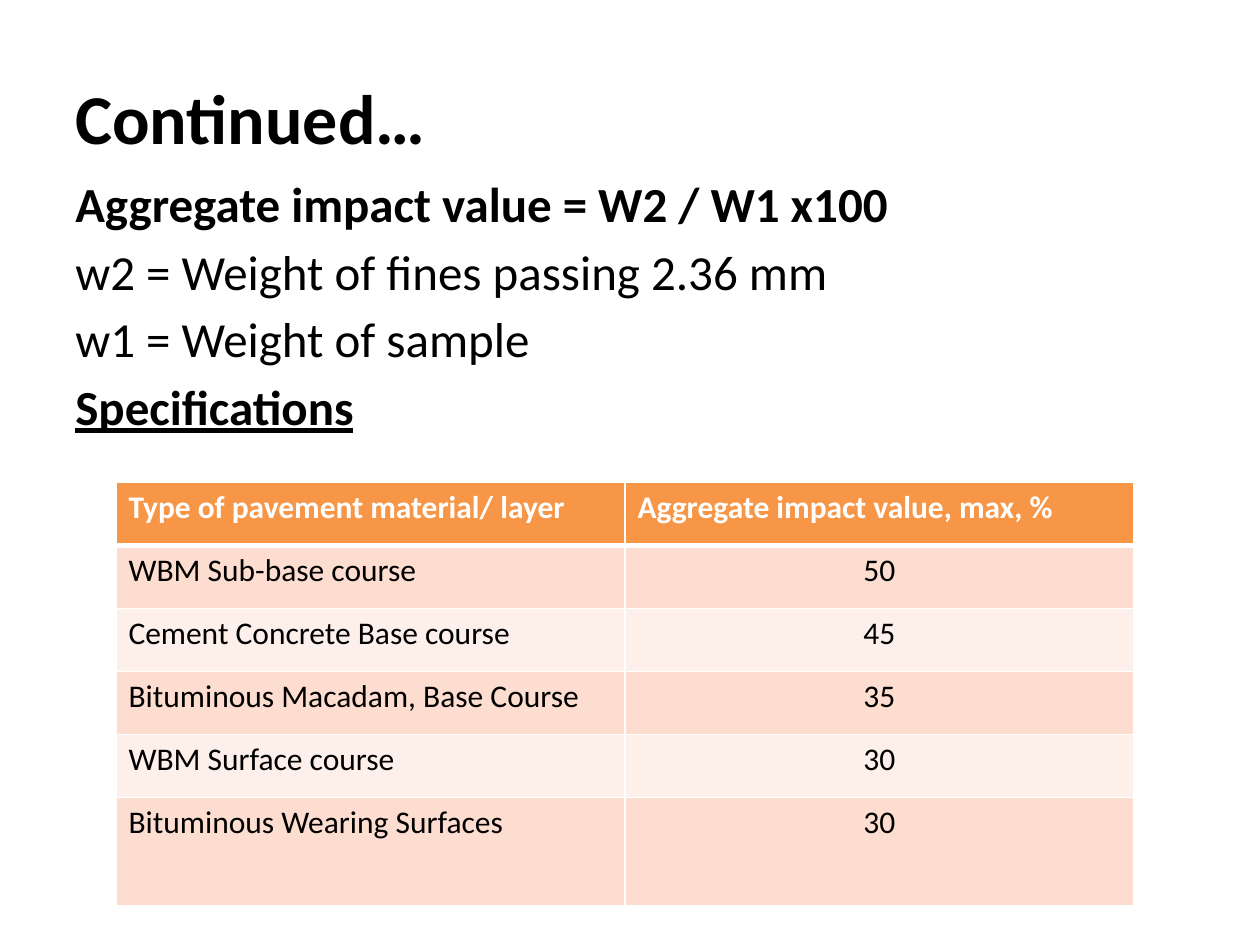
from lxml.etree import SubElement
from pptx import Presentation
from pptx.dml.color import RGBColor
from pptx.enum.text import MSO_ANCHOR, PP_ALIGN
from pptx.oxml.ns import qn
from pptx.util import Inches, Pt

TITLE = "Continued…"
BODY = [
    ("Aggregate impact value = W2 / W1 x100", {"bold": True}),
    ("w2 = Weight of fines passing 2.36 mm", {}),
    ("w1 = Weight of sample", {}),
    ("Specifications", {"bold": True, "underline": True}),
]
SPECIFICATIONS = [
    ("Type of pavement material/ layer", "Aggregate impact value, max, %"),
    ("WBM Sub-base course", "50"),
    ("Cement Concrete Base course", "45"),
    ("Bituminous Macadam, Base Course", "35"),
    ("WBM Surface course", "30"),
    ("Bituminous Wearing Surfaces", "30"),
]
THEME = {
    "font": "Calibri",
    "title_size": 40,
    "body_size": 28,
    "table_size": 18,
    "text": "000000",
    "light": "FFFFFF",
    "header": "F79646",
    "bands": ("FCDDCF", "FDEFE9"),
}
COLUMN_WIDTH = 4.04
ROW_HEIGHT = 0.5
LAST_ROW_HEIGHT = 0.86


def write(paragraph, text, size, color=THEME["text"], **formats):
    run = paragraph.add_run()
    run.text = text
    values = {"name": THEME["font"], "size": Pt(size), "bold": False, **formats}
    for name, value in values.items():
        setattr(run.font, name, value)
    run.font.color.rgb = RGBColor.from_string(color)


def add_text(slide, box, lines, size, anchor):
    frame = slide.shapes.add_textbox(*map(Inches, box)).text_frame
    frame.word_wrap = True
    frame.vertical_anchor = anchor
    for index, (text, formats) in enumerate(lines):
        paragraph = frame.add_paragraph() if index else frame.paragraphs[0]
        if index:
            paragraph.space_before = Pt(5)
        write(paragraph, text, size, **formats)


def add_borders(cell, widths):
    properties = cell._tc.get_or_add_tcPr()
    for side, width in widths.items():
        line = SubElement(properties, qn(f"a:ln{side}"), w=str(Pt(width)))
        fill = SubElement(line, qn("a:solidFill"))
        SubElement(fill, qn("a:srgbClr"), val=THEME["light"])


def add_specifications(slide):
    row_count, column_count = len(SPECIFICATIONS), len(SPECIFICATIONS[0])
    heights = [ROW_HEIGHT] * (row_count - 1) + [LAST_ROW_HEIGHT]
    box = (0.92, 3.83, COLUMN_WIDTH * column_count, sum(heights))
    table = slide.shapes.add_table(row_count, column_count, *map(Inches, box)).table
    for column in table.columns:
        column.width = Inches(COLUMN_WIDTH)
    for row, (values, height) in enumerate(zip(SPECIFICATIONS, heights)):
        table.rows[row].height = Inches(height)
        header = row == 0
        fill = THEME["header"] if header else THEME["bands"][(row - 1) % 2]
        color = THEME["light"] if header else THEME["text"]
        widths = {"L": 1, "R": 1, "T": 3 if row == 1 else 1, "B": 3 if header else 1}
        for column, text in enumerate(values):
            cell = table.cell(row, column)
            add_borders(cell, widths)
            cell.fill.solid()
            cell.fill.fore_color.rgb = RGBColor.from_string(fill)
            paragraph = cell.text_frame.paragraphs[0]
            if column and not header:
                paragraph.alignment = PP_ALIGN.CENTER
            write(paragraph, text, THEME["table_size"], color, bold=header)


def main():
    presentation = Presentation()
    presentation.slide_width = Inches(10)
    presentation.slide_height = Inches(7.5)
    slide = presentation.slides.add_slide(presentation.slide_layouts[6])
    add_text(slide, (0.5, 0.3, 9, 1.25), [(TITLE, {"bold": True})],
             THEME["title_size"], MSO_ANCHOR.MIDDLE)
    add_text(slide, (0.5, 1.33, 9, 5.37), BODY, THEME["body_size"], MSO_ANCHOR.TOP)
    add_specifications(slide)
    presentation.save("out.pptx")


if __name__ == "__main__":
    main()
